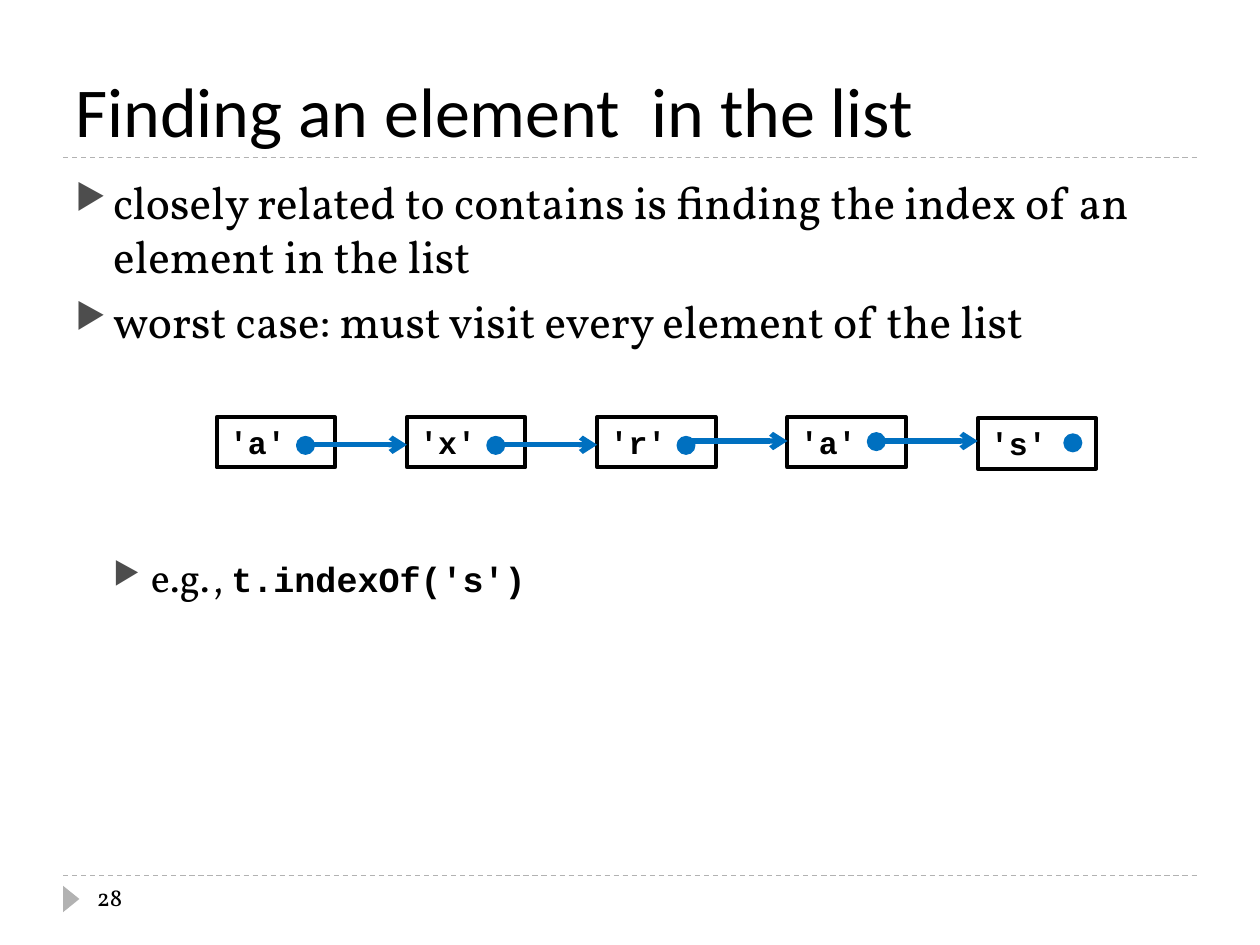
from lxml import etree
from pptx import Presentation
from pptx.dml.color import RGBColor
from pptx.enum import dml, shapes, text
from pptx.oxml.ns import qn
from pptx.util import Inches, Pt

HUES = {"ink": "000000", "rule": "B2B2B2", "mark": "4D4D4D", "link": "0070C0"}
HUES = {name: RGBColor.from_string(code) for name, code in HUES.items()}
SERIF = {"name": "Vollkorn", "bold": False}
CODE = {"name": "Courier New", "bold": True}


def write(para, words, size, face):
    """Add a run of black text to a paragraph."""
    run = para.add_run()
    run.text = words
    for key, value in {**face, "size": Pt(size)}.items():
        setattr(run.font, key, value)
    run.font.color.rgb = HUES["ink"]


def draw_line(start, end, hue, width):
    """Add a straight connector without shadow and return its line format."""
    wire = slide.shapes.add_connector(
        shapes.MSO_CONNECTOR.STRAIGHT, *map(Inches, start + end))
    wire.line.color.rgb = HUES[hue]
    wire.line.width = Pt(width)
    props = wire.line._get_or_add_ln()
    etree.SubElement(props.getparent(), qn("a:effectLst"))
    return wire.line


deck = Presentation()
deck.slide_width, deck.slide_height = Inches(10), Inches(7.5)
slide = deck.slides.add_slide(deck.slide_layouts[6])

# Rules and page marker
for y in (6.95, 1.25):
    draw_line((0.5, y), (9.5, y), "rule", 0.75).dash_style = dml.MSO_LINE.DASH

flag = slide.shapes.add_shape(
    shapes.MSO_SHAPE.ISOSCELES_TRIANGLE, *map(Inches, (0.46, 7.07, 0.21, 0.13)))
flag.rotation = 90
flag.shadow.inherit = False
flag.fill.solid()
flag.fill.fore_color.rgb = HUES["rule"]
flag.line.fill.background()

# Text frames: title, body, page number
frames = []
for place, anchor in (
    ((0.5, 0.17, 9, 1.08), text.MSO_ANCHOR.BOTTOM),
    ((0.5, 1.33, 9, 5.4), text.MSO_ANCHOR.TOP),
    ((0.67, 6.95, 2.17, 0.4), text.MSO_ANCHOR.TOP),
):
    frame = slide.shapes.add_textbox(*map(Inches, place)).text_frame
    frame.word_wrap = True
    frame.vertical_anchor = anchor
    frames.append(frame)
title, body, page = frames
write(title.paragraphs[0], "Finding an element  in the list", 40, {"name": "Calibri"})
write(page.paragraphs[0], "28", 14, SERIF)

# Bullets: level, space before, runs; the last leaves room for the diagram
points = [
    (0, 6, [("closely related to contains is finding the index of an element"
             " in the list", 26, SERIF)]),
    (0, 6, [("worst case: must visit every element of the list", 26, SERIF)]),
    (1, 117, [("e.g., ", 23, SERIF), ("t.indexOf('s')", 20, CODE)]),
]
for row, (level, gap, runs) in enumerate(points):
    para = body.add_paragraph() if row else body.paragraphs[0]
    para.level = level
    para.space_before = Pt(gap)
    props = para._p.get_or_add_pPr()
    props.set("marL", str(Inches(0.3 * (level + 1))))
    props.set("indent", str(Inches(-0.3)))
    tint = etree.SubElement(props, qn("a:buClr"))
    etree.SubElement(tint, qn("a:srgbClr"), val=str(HUES["mark"]))
    etree.SubElement(props, qn("a:buSzPct"), val="76000")
    etree.SubElement(props, qn("a:buChar"), char="▶")
    for run in runs:
        write(para, *run)

# Linked list: letter, box top, dot top
nodes = [("a", 3.31, 3.47), ("x", 3.31, 3.47), ("r", 3.31, 3.47),
         ("a", 3.31, 3.44), ("s", 3.32, 3.45)]
first, pitch = 1.72, 1.51
for col, (letter, top, _) in enumerate(nodes):
    box = slide.shapes.add_shape(
        shapes.MSO_SHAPE.RECTANGLE,
        *map(Inches, (first + col * pitch, top, 0.94, 0.4)))
    box.shadow.inherit = False
    box.fill.background()
    box.line.color.rgb = HUES["ink"]
    box.line.width = Pt(2.25)
    box.text_frame.vertical_anchor = text.MSO_ANCHOR.TOP
    para = box.text_frame.paragraphs[0]
    para.alignment = text.PP_ALIGN.LEFT
    write(para, f"'{letter}'", 18, CODE)

for col, y in enumerate((3.53, 3.53, 3.5, 3.5)):
    left = first + col * pitch
    line = draw_line((left + 0.7, y), (left + pitch, y), "link", 3)
    etree.SubElement(line._get_or_add_ln(), qn("a:tailEnd"), type="arrow")

for col, (_, _, top) in enumerate(nodes):
    shift = 0.69 if col == len(nodes) - 1 else 0.64
    dot = slide.shapes.add_shape(
        shapes.MSO_SHAPE.OVAL,
        *map(Inches, (first + col * pitch + shift, top, 0.13, 0.13)))
    dot.shadow.inherit = False
    dot.fill.solid()
    dot.fill.fore_color.rgb = dot.line.color.rgb = HUES["link"]
    dot.line.width = Pt(1.5)

deck.save("out.pptx")
